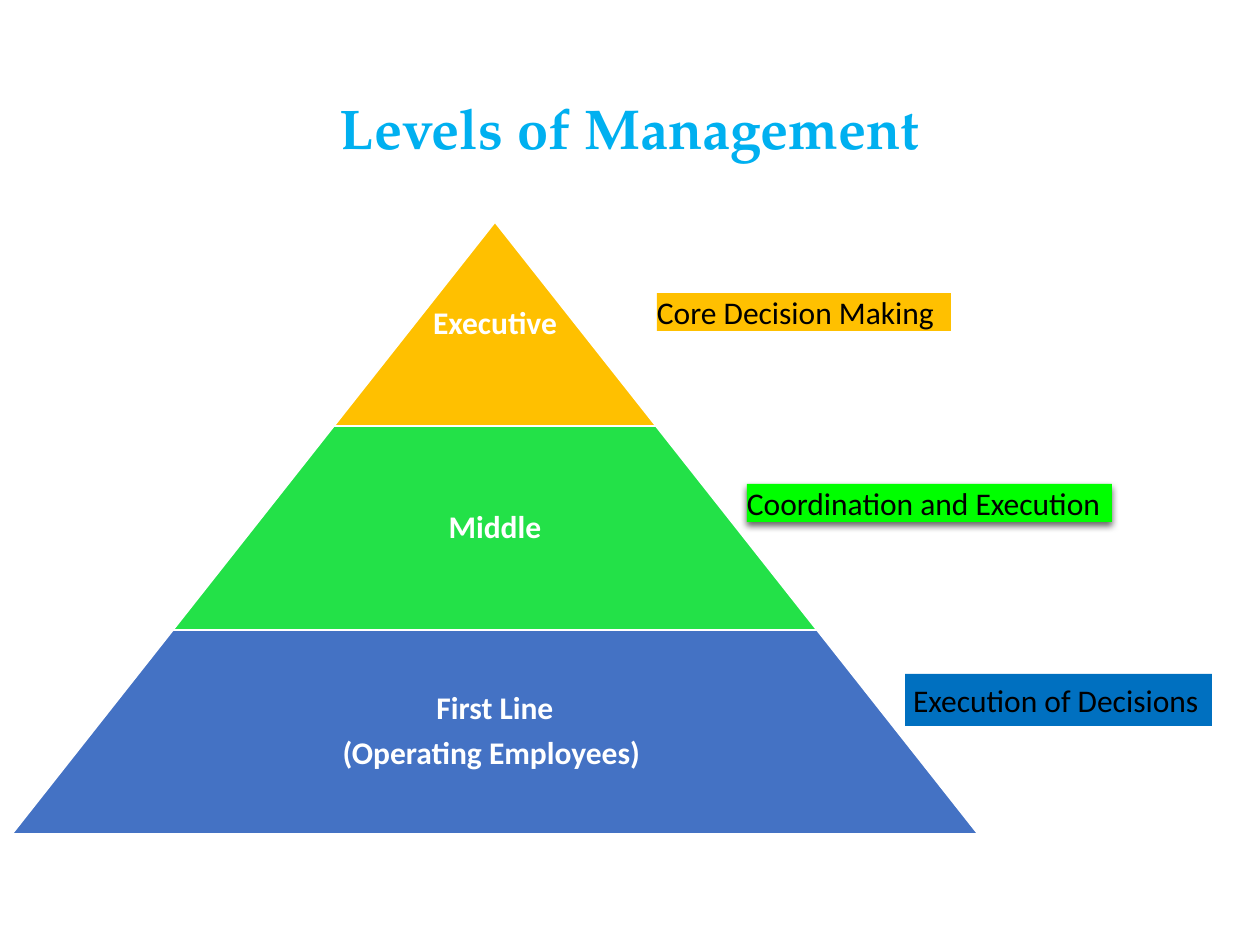
from dataclasses import dataclass

from lxml.etree import SubElement
from pptx import Presentation
from pptx.dml.color import RGBColor
from pptx.enum.shapes import MSO_SHAPE as Shape
from pptx.enum.text import MSO_ANCHOR as Anchor, MSO_AUTO_SIZE as AutoSize, PP_ALIGN as Align
from pptx.oxml.ns import qn
from pptx.util import Emu, Pt

PX_PER_INCH = 126
COLORS = {
    "title": "00B0F0",
    "executive": "FFC000",
    "middle": "23E148",
    "first_line": "4472C4",
    "core": "FFC000",
    "coordination": "00FF00",
    "decisions": "0070C0",
    "white": "FFFFFF",
    "black": "000000",
}
CENTER_X, PYRAMID_TOP = 495, 222
TIER_HEIGHT, WIDTH_STEP = 204, 322


@dataclass(frozen=True)
class Tier:
    lines: tuple[str, ...]
    color: str
    text_width: int


@dataclass(frozen=True)
class Label:
    text: str
    color: str
    left: int
    top: int
    width: int
    height: int
    inset: int = 0
    wrap: bool = True
    shadow: bool = False


TIERS = [
    Tier(("Executive",), "executive", 322),
    Tier(("Middle",), "middle", 418),
    Tier(("First Line", "(Operating Employees) "), "first_line", 628),
]
LABELS = [
    Label("Core Decision Making", "core", 657, 293, 294, 38),
    Label("Coordination and Execution", "coordination", 747, 484, 365, 38, wrap=False, shadow=True),
    Label("Execution of Decisions", "decisions", 905, 674, 307, 52, inset=8),
]


def px(n: int) -> Emu:
    return Emu(round(n * 914400 / PX_PER_INCH))


def rgb(name: str) -> RGBColor:
    return RGBColor.from_string(COLORS[name])


def set_frame(tf, inset: int, wrap: bool = True) -> None:
    tf.word_wrap = wrap
    tf.vertical_anchor = Anchor.MIDDLE
    tf.margin_left = tf.margin_right = tf.margin_top = tf.margin_bottom = px(inset)


def set_font(p, size: int, color: str, bold: bool, name: str = "Calibri") -> None:
    f = p.font
    f.name, f.size, f.bold = name, Pt(size), bold
    f.color.rgb = rgb(color)


def add_shadow(sp) -> None:
    effects = sp._element.spPr.find(qn("a:effectLst"))
    outer = SubElement(effects, qn("a:outerShdw"), blurRad=str(Pt(4)), dist=str(Pt(2)),
                       dir="5400000", algn="ctr", rotWithShape="0")
    color = SubElement(outer, qn("a:srgbClr"), val=COLORS["black"])
    SubElement(color, qn("a:alpha"), val="60000")


def add_title(s, text: str) -> None:
    sp = s.shapes.title
    sp.left, sp.top, sp.width, sp.height = px(0), px(77), px(1260), px(91)
    tf = sp.text_frame
    tf.text = text
    tf.word_wrap = True
    tf.vertical_anchor = Anchor.TOP
    tf.auto_size = AutoSize.SHAPE_TO_FIT_TEXT
    p = tf.paragraphs[0]
    p.alignment, p.line_spacing, p.space_before, p.space_after = Align.CENTER, 1.15, Pt(0), Pt(6)
    set_font(p, 32, "title", True, "TeX Gyre Pagella")


def add_tier(s, tier: Tier, index: int) -> None:
    width = WIDTH_STEP * (index + 1)
    top = PYRAMID_TOP + TIER_HEIGHT * index
    sp = s.shapes.add_shape(Shape.TRAPEZOID, px(CENTER_X - width // 2), px(top), px(width), px(TIER_HEIGHT))
    sp.adjustments[0] = WIDTH_STEP / 2 / TIER_HEIGHT
    sp.shadow.inherit = False
    sp.fill.solid()
    sp.fill.fore_color.rgb = rgb(tier.color)
    sp.line.color.rgb = rgb("white")
    sp.line.width = Pt(1)

    box = s.shapes.add_textbox(px(CENTER_X - tier.text_width // 2), px(top), px(tier.text_width), px(TIER_HEIGHT))
    tf = box.text_frame
    set_frame(tf, 4)
    tf.text = "\n".join(tier.lines)
    for p in tf.paragraphs:
        p.alignment, p.line_spacing, p.space_after = Align.CENTER, 0.9, Pt(6)
        set_font(p, 18, "white", True)


def add_label(s, label: Label) -> None:
    sp = s.shapes.add_shape(Shape.RECTANGLE, px(label.left), px(label.top), px(label.width), px(label.height))
    sp.fill.solid()
    sp.fill.fore_color.rgb = rgb(label.color)
    sp.line.fill.background()
    sp.shadow.inherit = False
    if label.shadow:
        add_shadow(sp)
    tf = sp.text_frame
    set_frame(tf, label.inset, label.wrap)
    tf.auto_size = AutoSize.SHAPE_TO_FIT_TEXT
    tf.text = label.text
    p = tf.paragraphs[0]
    p.alignment = Align.LEFT
    set_font(p, 18, "black", False)


def main() -> None:
    prs = Presentation()
    prs.slide_width, prs.slide_height = px(1260), px(945)
    s = prs.slides.add_slide(prs.slide_layouts[5])
    add_title(s, "Levels of Management")
    for index, tier in enumerate(TIERS):
        add_tier(s, tier, index)
    for label in LABELS:
        add_label(s, label)
    prs.save("out.pptx")


if __name__ == "__main__":
    main()
